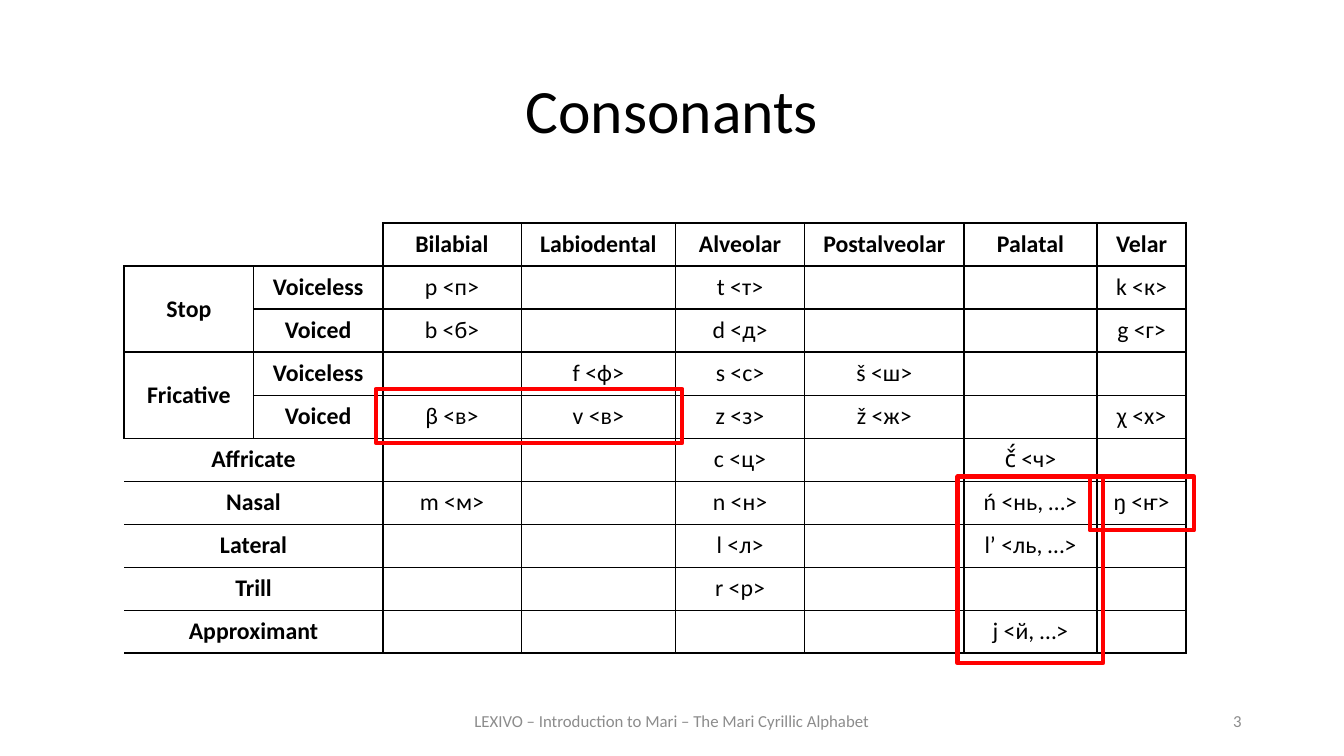
from lxml import etree
from pptx import Presentation
from pptx import util as u
from pptx.dml.color import RGBColor
from pptx.enum import shapes, text
from pptx.oxml import ns

HUES = {"ink": "000000", "note": "8C8C8C", "mark": "FF0000"}
COLS = [92.3, 92.3, 98.9, 110.2, 92.3, 113.8, 95, 63.8]
ROW = 30.74
ROWS = [
    ["", "", "Bilabial", "Labiodental", "Alveolar", "Postalveolar", "Palatal", "Velar"],
    ["Stop", "Voiceless", "p <п>", "", "t <т>", "", "", "k <к>"],
    ["", "Voiced", "b <б>", "", "d <д>", "", "", "g <г>"],
    ["Fricative", "Voiceless", "", "f <ф>", "s <с>", "š <ш>", "", ""],
    ["", "Voiced", "β <в>", "v <в>", "z <з>", "ž <ж>", "", "χ <х>"],
    ["Affricate", "", "", "", "c <ц>", "", "č́ <ч>", ""],
    ["Nasal", "", "m <м>", "", "n <н>", "", "ń <нь, …>", "ŋ <ҥ>"],
    ["Lateral", "", "", "", "l <л>", "", "l’ <ль, …>", ""],
    ["Trill", "", "", "", "r <р>", "", "", ""],
    ["Approximant", "", "", "", "", "", "j <й, …>", ""],
]
THICK_X, THICK_Y = {0, 2, len(COLS)}, {0, 1, len(ROWS)}


def write(frame, words, size=17, hue="ink", bold=False, align="CENTER", space=None):
    frame.word_wrap = True
    para = frame.paragraphs[0]
    para.alignment = getattr(text.PP_ALIGN, align)
    para.line_spacing = space
    # The paragraph font keeps empty cells at the same size.
    para.font.size = u.Pt(size)
    if words:
        run = para.add_run()
        run.text = words
        run.font.name, run.font.size, run.font.bold = "Calibri", u.Pt(size), bold
        run.font.color.rgb = RGBColor.from_string(HUES[hue])


def owner(row, col):
    """Return the cell whose merged area covers this one."""
    if col > 1:
        return row, col
    if 1 <= row <= 4:
        return (row, 1) if col else (row - (row - 1) % 2, 0)
    return row, 0


def edge(cell, side, width):
    """Draw one cell border; width 0 hides it."""
    line = etree.SubElement(cell._tc.get_or_add_tcPr(), ns.qn("a:ln" + side),
                            w=str(int(u.Pt(width))))
    if not width:
        etree.SubElement(line, ns.qn("a:noFill"))
        return
    fill = etree.SubElement(line, ns.qn("a:solidFill"))
    etree.SubElement(fill, ns.qn("a:srgbClr"), val=HUES["ink"])


def weigh(row, col, side):
    """Choose a border width from its place in the grid."""
    down, across = {"L": (0, -1), "R": (0, 1), "T": (-1, 0), "B": (1, 0)}[side]
    home = owner(row, col)
    if home == owner(row + down, col + across) or home == (0, 0) and side in "LT":
        return 0
    if across:
        return 1.5 if col + (across > 0) in THICK_X else 1
    return 1.5 if row + (down > 0) in THICK_Y else 1


class Page:
    def __init__(self, deck):
        self.slide = deck.slides.add_slide(deck.slide_layouts[5])
        self.shapes = self.slide.shapes

    def title(self, words, *box):
        head = self.shapes.title
        head.left, head.top, head.width, head.height = map(u.Pt, box)
        head.text_frame.vertical_anchor = text.MSO_ANCHOR.MIDDLE
        write(head.text_frame, words, size=44, space=0.9)

    def label(self, words, *box, **style):
        frame = self.shapes.add_textbox(*map(u.Pt, box)).text_frame
        frame.vertical_anchor = text.MSO_ANCHOR.MIDDLE
        write(frame, words, **style)

    def table(self, left, top):
        box = map(u.Pt, (left, top, sum(COLS), ROW * len(ROWS)))
        grid = self.shapes.add_table(len(ROWS), len(COLS), *box).table
        grid.first_row = grid.horz_banding = False
        for col, width in zip(grid.columns, COLS):
            col.width = u.Pt(width)
        for r, row in enumerate(ROWS):
            for c, words in enumerate(row):
                self.cell(grid, r, c, words)

    def cell(self, grid, r, c, words):
        cell = grid.cell(r, c)
        if owner(r, c) != (r, c):
            grid.cell(*owner(r, c)).merge(cell)
        pad, gap = (10, 5) if c == 0 and r else (8, 0.5) if c < 2 or r == 0 else (5, 0)
        cell.margin_left = cell.margin_right = u.Pt(pad)
        cell.margin_top = cell.margin_bottom = u.Pt(gap)
        cell.vertical_anchor = text.MSO_ANCHOR.MIDDLE
        for side in "LRTB":
            edge(cell, side, weigh(r, c, side))
        cell.fill.background()
        write(cell.text_frame, words, bold=c < 2 or r == 0)

    def frame(self, *box):
        rect = self.shapes.add_shape(shapes.MSO_SHAPE.RECTANGLE, *map(u.Pt, box))
        rect.shadow.inherit = False
        rect.fill.background()
        rect.line.color.rgb = RGBColor.from_string(HUES["mark"])
        rect.line.width = u.Pt(3)


def main():
    deck = Presentation()
    deck.slide_width, deck.slide_height = u.Pt(960), u.Pt(540)
    page = Page(deck)
    page.title("Consonants", 66, 28.8, 828, 104.4)
    page.label("LEXIVO – Introduction to Mari – The Mari Cyrillic Alphabet",
               318, 500.5, 324, 28.8, size=12, hue="note")
    page.label("3", 678, 500.5, 216, 28.8, size=12, hue="note", align="RIGHT")
    page.table(88.8, 159.3)
    page.frame(268.4, 277.9, 219, 38.5)
    page.frame(778.5, 340.4, 74.5, 38.5)
    page.frame(684, 340.4, 103.9, 133.4)
    deck.save("out.pptx")


if __name__ == "__main__":
    main()
